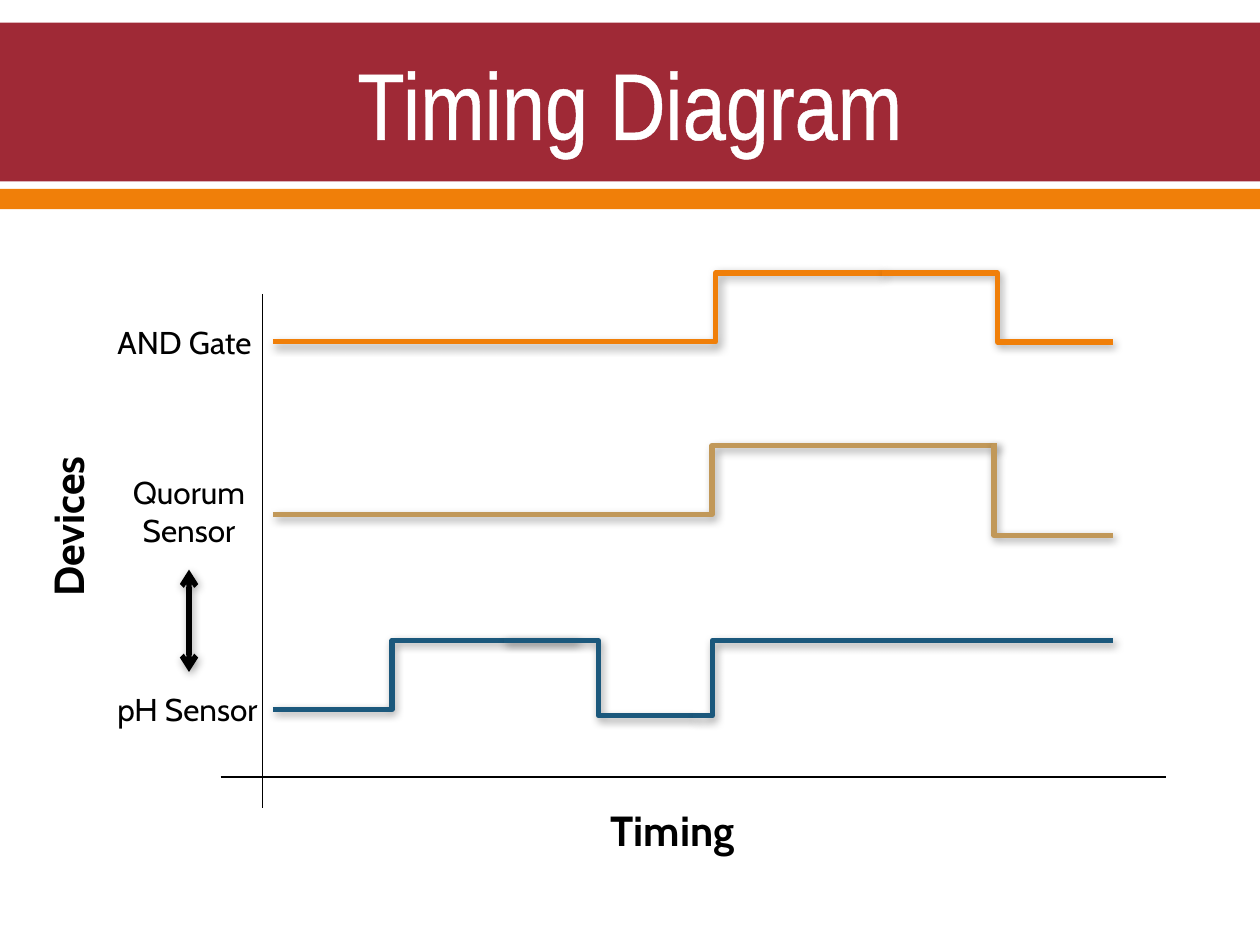
from dataclasses import dataclass

from lxml.etree import SubElement
from pptx import Presentation
from pptx.dml.color import RGBColor
from pptx.enum.shapes import MSO_CONNECTOR as Link, MSO_SHAPE as Preset
from pptx.enum.text import MSO_ANCHOR as Anchor, MSO_AUTO_SIZE as AutoSize, PP_ALIGN as Align
from pptx.oxml import parse_xml
from pptx.oxml.ns import nsdecls, qn
from pptx.util import Pt


@dataclass(frozen=True)
class Theme:
    white: str = "FFFFFF"
    black: str = "000000"
    crimson: str = "9F2936"
    orange: str = "F07F09"
    tan: str = "C19859"
    blue: str = "1B587C"
    title_font: str = "Arial Narrow"
    body_font: str = "Cabin"
    title_size: float = 54
    axis_size: float = 24
    label_size: float = 18
    axis_width: float = 0.79
    signal_width: float = 3


THEME = Theme()


# All positions and sizes are in points.
@dataclass(frozen=True)
class Band:
    top: float
    height: float
    color: str


@dataclass(frozen=True)
class Label:
    text: str
    left: float
    top: float
    width: float
    height: float
    size: float = THEME.label_size
    font: str = THEME.body_font
    color: str = THEME.black
    bold: bool = False
    align: Align = Align.LEFT
    rotation: float = 0


@dataclass(frozen=True)
class Step:
    """A level change from (x1, y1) to (x2, y2), rising or falling at bend."""
    x1: float
    y1: float
    x2: float
    y2: float
    bend: float
    color: str


BANDS = (Band(13, 90.7, THEME.crimson), Band(108, 11.5, THEME.orange))

TITLE = Label("Timing Diagram", 36, 14.4, 648, 87.8, THEME.title_size,
              THEME.title_font, THEME.white, align=Align.CENTER)

LABELS = (
    Label("Timing", 342, 456, 192, 36, THEME.axis_size, bold=True),
    Label("Devices", -15, 276, 108, 36, THEME.axis_size, bold=True, rotation=270),
    Label("AND Gate", 60, 181, 132, 29),
    Label("Quorum Sensor", 54, 267, 108, 51, align=Align.CENTER),
    Label("pH Sensor", 60, 391, 114, 29),
)

AXES = ((150, 168, 150, 462), (126, 444, 666, 444))
START, END = 156, 636

STEPS = (
    # AND gate
    Step(START, 195.4, 504, 156, 409, THEME.orange),
    Step(504, 156, END, 195.4, 570, THEME.orange),
    # Quorum sensor
    Step(START, 294, 570, 254.6, 407, THEME.tan),
    Step(570, 254.6, END, 306, 568, THEME.tan),
    # pH sensor
    Step(START, 405.4, 330, 366, 224, THEME.blue),
    Step(288, 366, 396, 409, 342, THEME.blue),
    Step(396, 409, END, 366, 407, THEME.blue),
)


def add_band(shapes, band: Band) -> None:
    bar = shapes.add_shape(Preset.RECTANGLE, 0, Pt(band.top), Pt(720), Pt(band.height))
    bar.shadow.inherit = False
    bar.fill.solid()
    bar.fill.fore_color.rgb = RGBColor.from_string(band.color)
    bar.line.fill.background()


def add_label(shapes, label: Label):
    box = shapes.add_textbox(Pt(label.left), Pt(label.top), Pt(label.width), Pt(label.height))
    box.rotation = label.rotation
    frame = box.text_frame
    frame.word_wrap = True
    frame.auto_size = AutoSize.SHAPE_TO_FIT_TEXT
    paragraph = frame.paragraphs[0]
    paragraph.alignment = label.align
    run = paragraph.add_run()
    run.text = label.text
    run.font.name = label.font
    run.font.size = Pt(label.size)
    run.font.bold = label.bold
    run.font.color.rgb = RGBColor.from_string(label.color)
    return box


def add_title(shapes, title: Label) -> None:
    box = add_label(shapes, title)
    frame = box.text_frame
    frame.auto_size = AutoSize.NONE
    frame.vertical_anchor = Anchor.MIDDLE
    outline = parse_xml(
        f'<a:ln {nsdecls("a")} w="{Pt(1.1)}"><a:solidFill>'
        f'<a:srgbClr val="{title.color}"/></a:solidFill></a:ln>')
    frame.paragraphs[0].runs[0].font._element.insert(0, outline)


def add_line(shapes, ends: tuple, color: str, width: float,
             kind: Link = Link.STRAIGHT, shadow: bool = False):
    line = shapes.add_connector(kind, *(Pt(value) for value in ends))
    line.line.color.rgb = RGBColor.from_string(color)
    line.line.width = Pt(width)
    effects = SubElement(line._element.spPr, qn("a:effectLst"))
    if shadow:
        effects.append(parse_xml(
            f'<a:outerShdw {nsdecls("a")} blurRad="{Pt(5)}" dist="{Pt(2)}" dir="3600000" '
            f'algn="tl" rotWithShape="0"><a:srgbClr val="{THEME.black}">'
            '<a:alpha val="36000"/></a:srgbClr></a:outerShdw>'))
    return line


def add_step(shapes, step: Step) -> None:
    line = add_line(shapes, (step.x1, step.y1, step.x2, step.y2), step.color,
                    THEME.signal_width, Link.ELBOW, shadow=True)
    share = (step.bend - step.x1) / (step.x2 - step.x1)
    guides = line._element.spPr.find(qn("a:prstGeom")).get_or_add_avLst()
    SubElement(guides, qn("a:gd"), name="adj1", fmla=f"val {round(share * 100000)}")


def add_double_arrow(shapes, ends: tuple) -> None:
    arrow = add_line(shapes, ends, THEME.black, THEME.signal_width, shadow=True)
    for end in ("a:headEnd", "a:tailEnd"):
        SubElement(arrow.line._get_or_add_ln(), qn(end), type="arrow")


def main() -> None:
    deck = Presentation()
    deck.slide_width, deck.slide_height = Pt(720), Pt(540)
    shapes = deck.slides.add_slide(deck.slide_layouts[6]).shapes

    # Header
    for band in BANDS:
        add_band(shapes, band)
    add_title(shapes, TITLE)

    # Axes and labels
    for axis in AXES:
        add_line(shapes, axis, THEME.black, THEME.axis_width)
    for label in LABELS:
        add_label(shapes, label)

    # Signals, and the arrow linking the two sensors
    for step in STEPS:
        add_step(shapes, step)
    add_double_arrow(shapes, (108, 325.5, 108, 384))

    deck.save("out.pptx")


if __name__ == "__main__":
    main()
